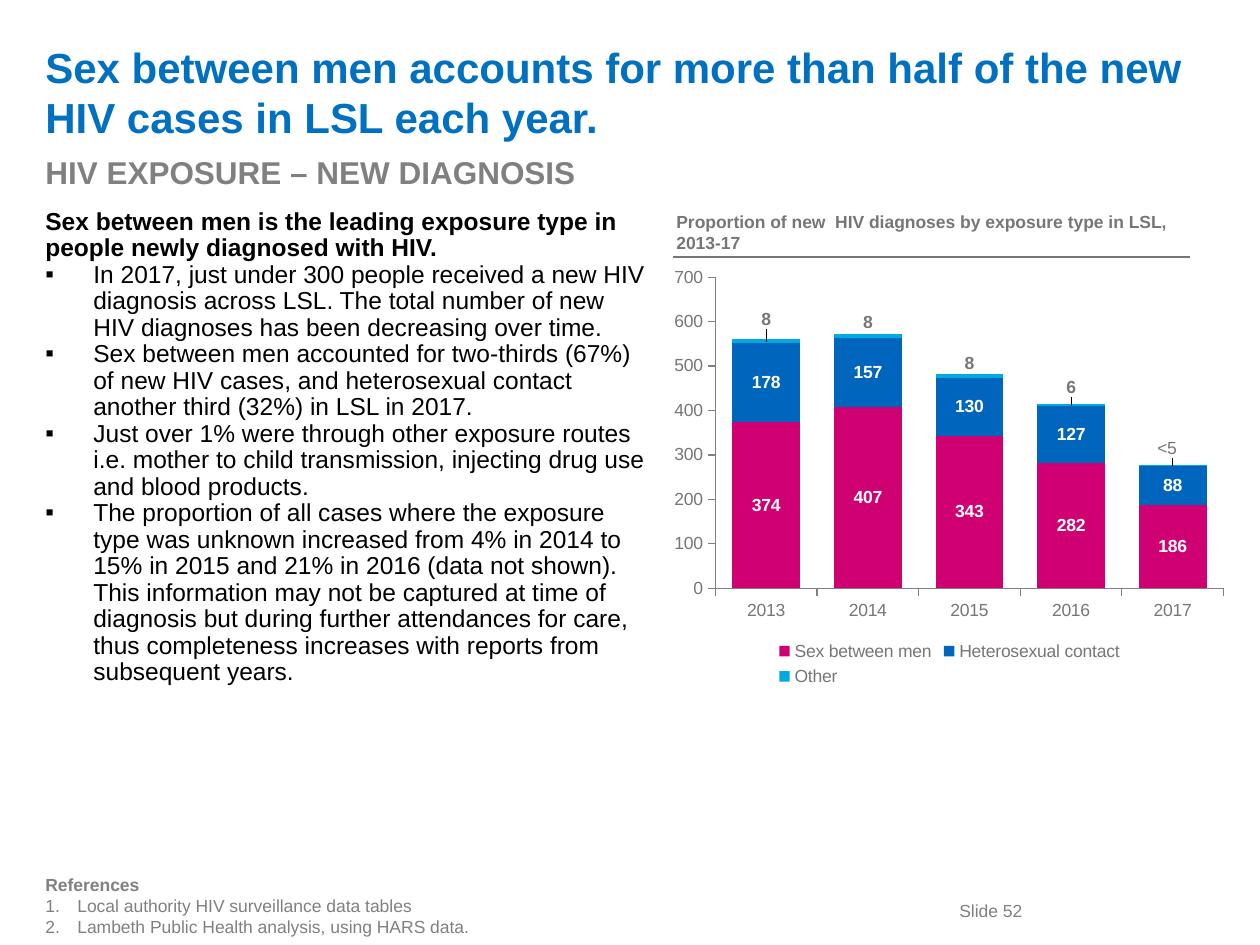
from pptx import Presentation
from pptx.chart.data import CategoryChartData
from pptx.dml.color import RGBColor
from pptx.enum.chart import XL_CHART_TYPE, XL_LABEL_POSITION, XL_LEGEND_POSITION, XL_TICK_MARK
from pptx.enum.shapes import MSO_CONNECTOR
from pptx.enum.text import MSO_ANCHOR
from pptx.oxml import parse_xml
from pptx.oxml.ns import nsdecls, qn
from pptx.util import Emu, Pt
from lxml import etree

SCALE = 914400 / 126
GREY, DARK_GREY = "808080", "767676"


def px(length):
    return Emu(round(length * SCALE))


def rgb(hex_string):
    return RGBColor.from_string(hex_string)


def manual_layout(target="", **values):
    """Chart layout, with values as fractions of the chart size."""
    inner = f'<c:layoutTarget val="{target}"/>' if target else ""
    if "w" in values:
        inner += '<c:xMode val="edge"/><c:yMode val="edge"/>'
    inner += "".join(f'<c:{name} val="{value}"/>' for name, value in values.items())
    return parse_xml(f'<c:layout {nsdecls("c")}><c:manualLayout>{inner}'
                     '</c:manualLayout></c:layout>')


def place(element, layout, after):
    for old in element.findall(qn("c:layout")):
        element.remove(old)
    if after is None:
        element.insert(0, layout)
    else:
        element.find(qn(after)).addnext(layout)


class SlideBuilder:
    def __init__(self, page, font="Arial"):
        self.page = page
        self.font = font

    def style(self, font, size, color, bold=False):
        font.name, font.size, font.bold = self.font, Pt(size), bold
        font.color.rgb = rgb(color)

    def text(self, at, lines, size, color, bold=True, wrap=True,
             anchor=MSO_ANCHOR.TOP, spacing=None, indent=0, bullet=None):
        """A first line, then any further lines as list items."""
        box = self.page.shapes.add_textbox(*map(px, at))
        frame = box.text_frame
        frame.word_wrap, frame.vertical_anchor = wrap, anchor
        for index, line in enumerate(lines):
            para = frame.paragraphs[0] if index == 0 else frame.add_paragraph()
            para.text = line
            if spacing:
                para.line_spacing = spacing
            if index and bullet:
                self.bullet(para, indent, bullet)
            self.style(para.font, size, color, bold and index == 0)

    def bullet(self, para, indent, bullet):
        properties = para._p.get_or_add_pPr()
        properties.set("marL", str(px(indent)))
        properties.set("indent", str(-px(indent)))
        etree.SubElement(properties, qn("a:buFont")).set("typeface", self.font)
        tag, key = ("a:buAutoNum", "type") if bullet == "arabicPeriod" else ("a:buChar", "char")
        etree.SubElement(properties, qn(tag)).set(key, bullet)

    def line(self, start, end, color, width):
        rule = self.page.shapes.add_connector(
            MSO_CONNECTOR.STRAIGHT, *map(px, start + end))
        rule.line.color.rgb, rule.line.width = rgb(color), Pt(width)
        etree.SubElement(rule._element.spPr, qn("a:effectLst"))

    def stacked_chart(self, at, categories, series, size, color):
        data = CategoryChartData(number_format="General")
        data.categories = categories
        for name, values, *_ in series:
            data.add_series(name, values)
        chart = self.page.shapes.add_chart(
            XL_CHART_TYPE.COLUMN_STACKED, *map(px, at), data).chart
        self.style(chart.font, size, color)
        chart.has_title = False
        chart.has_legend = True
        chart.legend.position = XL_LEGEND_POSITION.BOTTOM
        chart.legend.include_in_layout = False

        plot = chart.plots[0]
        plot.gap_width, plot.overlap, plot.vary_by_categories = 50, 100, False
        for bars, (_, _, fill, label_color) in zip(plot.series, series):
            bars.format.fill.solid()
            bars.format.fill.fore_color.rgb = rgb(fill)
            labels = bars.data_labels
            labels.show_value, labels.position = True, XL_LABEL_POSITION.CENTER
            self.style(labels.font, size, label_color, True)

        for axis in (chart.category_axis, chart.value_axis):
            axis.has_major_gridlines = False
            axis.major_tick_mark = XL_TICK_MARK.OUTSIDE
            axis.minor_tick_mark = XL_TICK_MARK.NONE
            axis.format.line.color.rgb = rgb(GREY)
            self.style(axis.tick_labels.font, size, color)
        return chart

    def lift_labels(self, bars, offsets, size, color, last_text):
        """Move labels above the columns; the last one has its own text."""
        last = len(offsets) - 1
        for index, (x, y) in enumerate(offsets):
            label = bars.points[index].data_label
            if index == last:
                para = label.text_frame.paragraphs[0]
                span = para.add_run()
                span.text = last_text
                self.style(span.font, size, color)
            else:
                self.style(label.font, size, color, True)
            label.position = XL_LABEL_POSITION.CENTER
            element = bars.data_labels._element.findall(qn("c:dLbl"))[index]
            place(element, manual_layout(x=x, y=y), "c:idx")


def main():
    deck = Presentation()
    deck.slide_width, deck.slide_height = px(1260), px(945)
    builder = SlideBuilder(deck.slides.add_slide(deck.slide_layouts[6]))

    # Headings
    builder.text((33, 26, 1176, 131),
                 ["Sex between men accounts for more than half of the new "
                  "HIV cases in LSL each year."],
                 24, "0070C0", anchor=MSO_ANCHOR.MIDDLE)
    builder.text((33, 147, 607, 50), ["HIV EXPOSURE – NEW DIAGNOSIS"], 18, GREY)

    # Key findings
    builder.text((33, 203, 630, 638), [
        "Sex between men is the leading exposure type in people newly diagnosed with HIV.",
        "In 2017, just under 300 people received a new HIV diagnosis across LSL. "
        "The total number of new HIV diagnoses has been decreasing over time.",
        "Sex between men accounted for two-thirds (67%) of new HIV cases, and "
        "heterosexual contact another third (32%) in LSL in 2017.",
        "Just over 1% were through other exposure routes i.e. mother to child "
        "transmission, injecting drug use and blood products.",
        "The proportion of all cases where the exposure type was unknown increased "
        "from 4% in 2014 to 15% in 2015 and 21% in 2016 (data not shown). This "
        "information may not be captured at time of diagnosis but during further "
        "attendances for care, thus completeness increases with reports from "
        "subsequent years.",
    ], 14, "000000", spacing=0.9, indent=48, bullet="▪")

    # Chart heading with rule
    builder.text((664, 205, 546, 55),
                 ["Proportion of new  HIV diagnoses by exposure type in LSL, 2013-17"],
                 10, DARK_GREY)
    builder.line((673, 257), (1190, 257), DARK_GREY, 1.5)

    # Diagnoses chart
    chart = builder.stacked_chart(
        (664, 260, 571, 432), ["2013", "2014", "2015", "2016", "2017"], [
            ("Sex between men", (374, 407, 343, 282, 186), "CF0072", "FFFFFF"),
            ("Heterosexual contact", (178, 157, 130, 127, 88), "0065BD", "FFFFFF"),
            ("Other", (8, 8, 8, 6, 4), "00A9E0", DARK_GREY),
        ], 10, DARK_GREY)
    axis = chart.value_axis
    axis.minimum_scale, axis.maximum_scale, axis.major_unit = 0, 700, 100
    axis.tick_labels.number_format = "#,##0"
    axis.tick_labels.number_format_is_linked = False
    builder.lift_labels(
        chart.plots[0].series[2],
        [(0, -0.05), (0, -0.03), (0, -0.03), (0, -0.04), (-0.01, -0.04)],
        10, DARK_GREY, "<5")
    place(chart._chartSpace.chart.plotArea,
          manual_layout("inner", x=0.09, y=0.04, w=0.89, h=0.72), None)
    place(chart.legend._element,
          manual_layout(x=0.19, y=0.87, w=0.62, h=0.13), "c:legendPos")

    # References and slide number
    builder.text((33, 868, 907, 77), [
        "References",
        "Local authority HIV surveillance data tables",
        "Lambeth Public Health analysis, using HARS data.",
    ], 10, GREY, indent=32, bullet="arabicPeriod")
    builder.text((947, 894, 91, 34), ["Slide 52"], 10, GREY, bold=False, wrap=False)

    deck.save("out.pptx")


if __name__ == "__main__":
    main()
